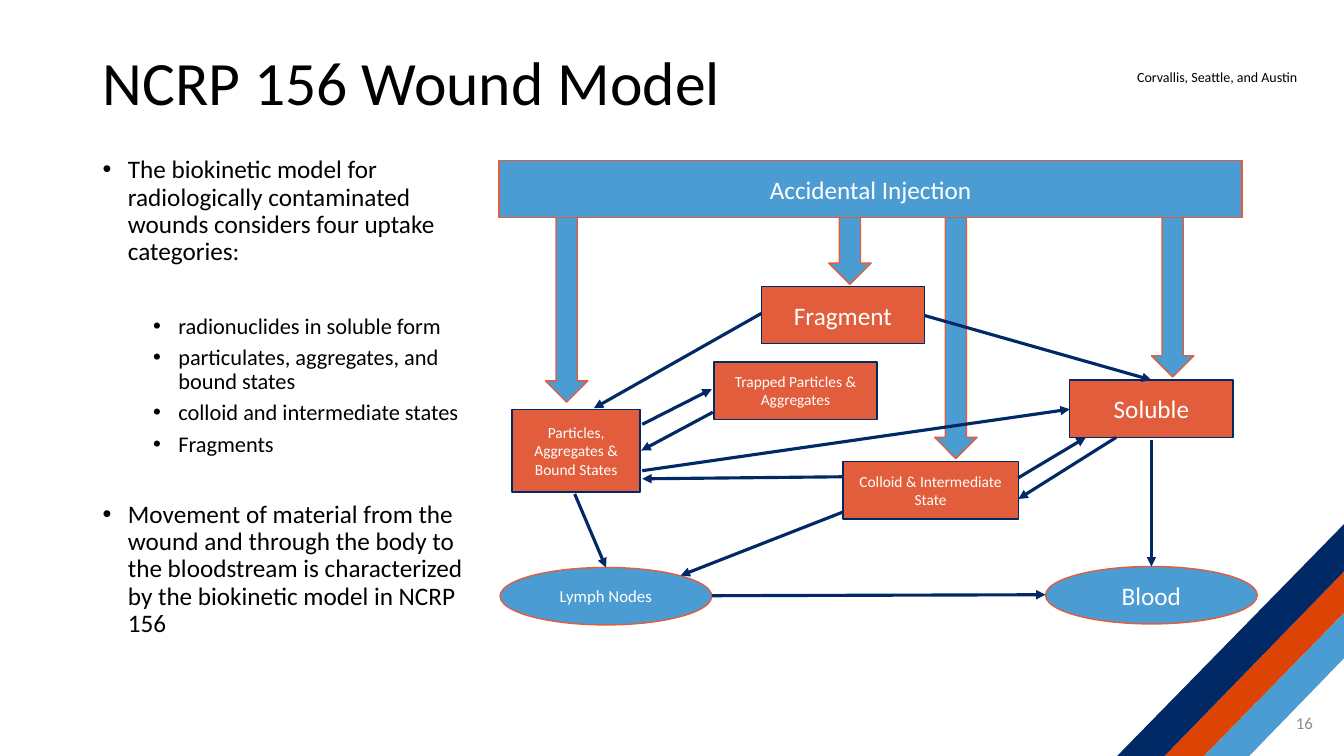
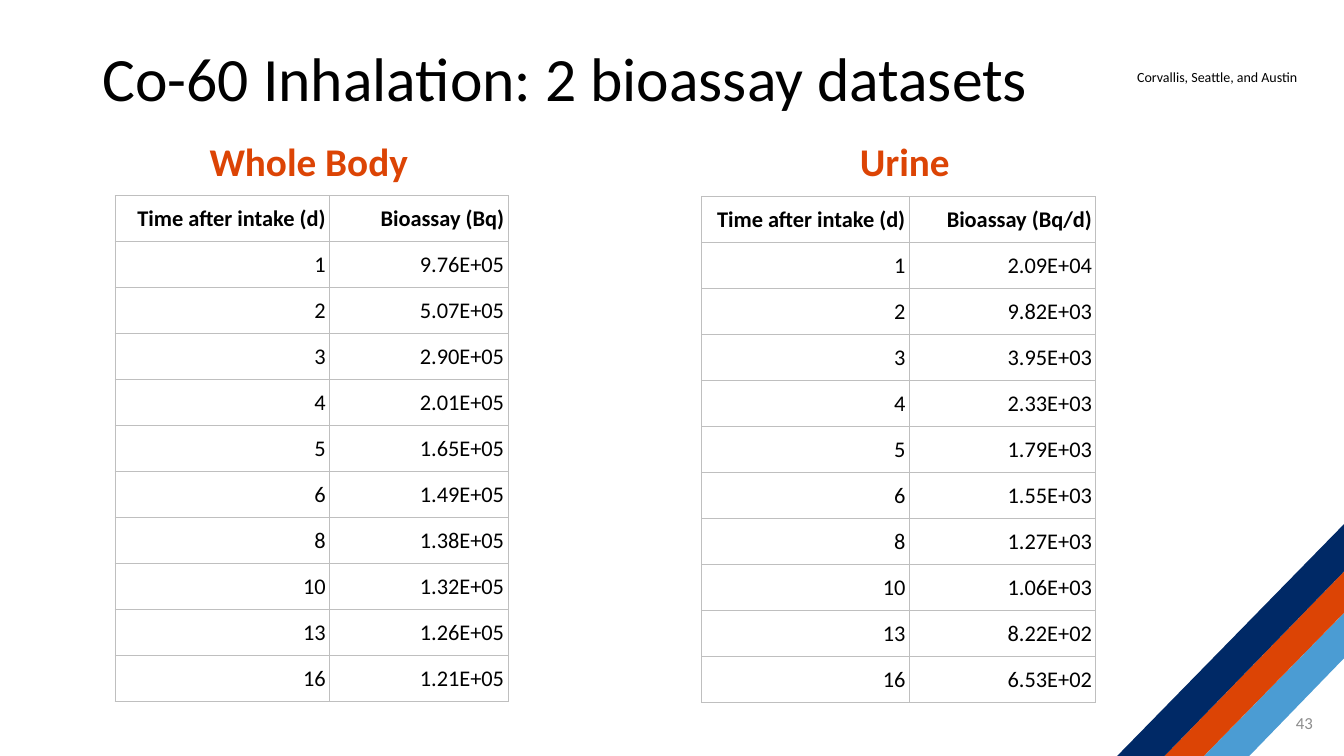
"""Build two slides: the wound model diagram and the inhalation bioassay tables."""
from dataclasses import dataclass, field
from typing import Any

from lxml.etree import SubElement
from pptx import Presentation
from pptx.dml.color import RGBColor
from pptx.enum.shapes import MSO_CONNECTOR, MSO_SHAPE
from pptx.enum.text import MSO_ANCHOR, PP_ALIGN
from pptx.oxml import parse_xml
from pptx.oxml.ns import nsdecls, qn
from pptx.util import Emu, Pt

EMU_PER_PX = 9144
WIDTH, HEIGHT = 1333, 750
FONT = "Calibri"
NAVY, ORANGE, SKY, CORAL = "002966", "DC4405", "4B9CD3", "E25D3C"
BLACK, WHITE, GREY, RULE = "000000", "FFFFFF", "8C8C8C", "BFBFBF"


@dataclass(frozen=True)
class Box:
    left: int
    top: int
    width: int
    height: int


@dataclass(frozen=True)
class Style:
    size: int
    color: str = BLACK
    bold: bool = False
    para: dict[str, Any] = field(default_factory=dict)


@dataclass(frozen=True)
class Bullet:
    text: str
    size: int
    before: int
    level: int = 0


@dataclass(frozen=True)
class Stripe:
    color: str
    bottom: tuple[int, int]
    right: tuple[int, int]


@dataclass(frozen=True)
class Node:
    text: str
    box: Box
    size: int
    kind: MSO_SHAPE = MSO_SHAPE.RECTANGLE
    fill: str = CORAL
    line: str = NAVY


@dataclass(frozen=True)
class Flow:
    start: tuple[int, int]
    end: tuple[int, int]


@dataclass(frozen=True)
class Dataset:
    heading: str
    heading_left: int
    unit: str
    box: Box
    columns: tuple[int, int]
    values: tuple[str, ...]


TITLE = Style(44, para={"line_spacing": 0.9})
LOCATION = Style(10)
NUMBER = Style(12, GREY, para={"alignment": PP_ALIGN.RIGHT})
HEADING = Style(28, ORANGE, True, {"line_spacing": 0.9})

STRIPES = (
    Stripe(SKY, (1194, 1239), (608, 653)),
    Stripe(ORANGE, (1155, 1194), (567, 608)),
    Stripe(NAVY, (1108, 1155), (520, 567)),
)

BULLETS = (
    Bullet("The biokinetic model for radiologically contaminated wounds considers four uptake categories:", 18, 0),
    Bullet("radionuclides in soluble form", 16, 35, 1),
    Bullet("particulates, aggregates, and bound states", 16, 5, 1),
    Bullet("colloid and intermediate states", 16, 5, 1),
    Bullet("Fragments", 16, 5, 1),
    Bullet("Movement of material from the wound and through the body to the bloodstream is "
           "characterized by the biokinetic model in NCRP 156", 18, 32),
)

INJECTION_ARROWS = (
    Box(541, 196, 42, 203),
    Box(822, 210, 42, 72),
    Box(927, 208, 42, 247),
    Box(1142, 171, 42, 203),
)

NODES = (
    Node("Accidental Injection", Box(495, 159, 737, 57), 18, fill=SKY, line=CORAL),
    Node("Soluble", Box(1061, 377, 162, 57), 18),
    Node("Fragment", Box(755, 284, 162, 57), 18),
    Node("Trapped Particles & Aggregates", Box(708, 359, 162, 57), 11),
    Node("Colloid & Intermediate State", Box(836, 458, 174, 57), 11),
    Node("Particles, Aggregates & Bound States", Box(508, 406, 127, 82), 11),
    Node("Blood", Box(1037, 562, 210, 57), 18, MSO_SHAPE.OVAL, SKY, CORAL),
    Node("Lymph Nodes", Box(496, 563, 210, 57), 12, MSO_SHAPE.OVAL, SKY, CORAL),
)

FLOWS = (
    Flow((917, 313), (1142, 377)),
    Flow((1142, 437), (1142, 562)),
    Flow((706, 591), (1037, 590)),
    Flow((637, 467), (1061, 406)),
    Flow((836, 508), (675, 571)),
    Flow((570, 490), (601, 563)),
    Flow((755, 311), (589, 405)),
    Flow((637, 421), (706, 386)),
    Flow((707, 409), (636, 447)),
    Flow((836, 473), (637, 475)),
    Flow((1010, 474), (1077, 434)),
    Flow((1107, 434), (1010, 495)),
)

DAYS = ("1", "2", "3", "4", "5", "6", "8", "10", "13", "16")
DATASETS = (
    Dataset("Whole Body", 208, "Bq", Box(114, 194, 390, 502), (213, 177),
            ("9.76E+05", "5.07E+05", "2.90E+05", "2.01E+05", "1.65E+05",
             "1.49E+05", "1.38E+05", "1.32E+05", "1.26E+05", "1.21E+05")),
    Dataset("Urine", 853, "Bq/d", Box(696, 195, 391, 502), (206, 185),
            ("2.09E+04", "9.82E+03", "3.95E+03", "2.33E+03", "1.79E+03",
             "1.55E+03", "1.27E+03", "1.06E+03", "8.22E+02", "6.53E+02")),
)


def px(length: int) -> Emu:
    """Turn pixels into EMU."""
    return Emu(length * EMU_PER_PX)


def place(box: Box) -> tuple[Emu, Emu, Emu, Emu]:
    """Turn a box into EMU lengths."""
    return px(box.left), px(box.top), px(box.width), px(box.height)


def rgb(code: str) -> RGBColor:
    """Turn a hex string into a colour."""
    return RGBColor.from_string(code)


def apply(target: Any, values: dict[str, Any]) -> None:
    """Set each named attribute on the target."""
    for name, value in values.items():
        setattr(target, name, value)


def write(para: Any, text: str, style: Style) -> None:
    """Add one styled span to a paragraph."""
    apply(para, style.para)
    span = para.add_run()
    span.text = text
    apply(span.font, {"name": FONT, "size": Pt(style.size), "bold": style.bold})
    span.font.color.rgb = rgb(style.color)


def add_text(page: Any, box: Box, text: str, style: Style, wrap: bool = True) -> None:
    """Add a text box holding one paragraph."""
    frame = page.shapes.add_textbox(*place(box)).text_frame
    apply(frame, {"word_wrap": wrap, "vertical_anchor": MSO_ANCHOR.MIDDLE})
    write(frame.paragraphs[0], text, style)


def paint(shape: Any, fill: str, line: str | None = None) -> None:
    """Give a shape a flat fill and an optional thin outline."""
    shape.shadow.inherit = False
    shape.fill.solid()
    shape.fill.fore_color.rgb = rgb(fill)
    if line is None:
        shape.line.fill.background()
    else:
        shape.line.color.rgb = rgb(line)
        shape.line.width = Pt(1)


def add_stripe(page: Any, stripe: Stripe) -> None:
    """Draw one diagonal band across the bottom right corner."""
    (near, far), (upper, lower) = stripe.bottom, stripe.right
    builder = page.shapes.build_freeform(near, HEIGHT, scale=EMU_PER_PX)
    builder.add_line_segments([(WIDTH, upper), (WIDTH, lower), (far, HEIGHT)])
    paint(builder.convert_to_shape(), stripe.color)


def add_page(deck: Any, title: str, title_top: int, number: int) -> Any:
    """Add a blank page with the shared title, place line, stripes and number."""
    page = deck.slides.add_slide(deck.slide_layouts[6])
    add_text(page, Box(1118, 63, 182, 27), "Corvallis, Seattle, and Austin", LOCATION, wrap=False)
    for stripe in STRIPES:
        add_stripe(page, stripe)
    add_text(page, Box(92, title_top, 1150, 110), title, TITLE)
    add_text(page, Box(1012, 697, 300, 40), str(number), NUMBER)
    return page


def add_bullets(page: Any, box: Box, bullets: tuple[Bullet, ...]) -> None:
    """Add a two-level bulleted list."""
    frame = page.shapes.add_textbox(*place(box)).text_frame
    frame.word_wrap = True
    for index, bullet in enumerate(bullets):
        para = frame.add_paragraph() if index else frame.paragraphs[0]
        properties = para._p.get_or_add_pPr()
        properties.set("marL", str(px(25 + 50 * bullet.level)))
        properties.set("indent", str(px(-25)))
        SubElement(properties, qn("a:buFont"), typeface="Arial")
        SubElement(properties, qn("a:buChar"), char="•")
        spacing = {"level": bullet.level, "line_spacing": 0.9, "space_before": Pt(bullet.before)}
        write(para, bullet.text, Style(bullet.size, para=spacing))


def add_node(page: Any, node: Node) -> None:
    """Draw one labelled compartment."""
    shape = page.shapes.add_shape(node.kind, *place(node.box))
    paint(shape, node.fill, node.line)
    apply(shape.text_frame, {"word_wrap": True, "vertical_anchor": MSO_ANCHOR.MIDDLE})
    write(shape.text_frame.paragraphs[0], node.text,
          Style(node.size, WHITE, para={"alignment": PP_ALIGN.CENTER}))


def add_flow(page: Any, flow: Flow) -> None:
    """Draw one arrow between compartments."""
    ends = (px(length) for length in (*flow.start, *flow.end))
    arrow = page.shapes.add_connector(MSO_CONNECTOR.STRAIGHT, *ends)
    arrow.line.color.rgb = rgb(NAVY)
    arrow.line.width = Pt(2.25)
    SubElement(arrow.line._get_or_add_ln(), qn("a:tailEnd"), type="triangle")
    SubElement(arrow._element.spPr, qn("a:effectLst"))


def add_borders(cell: Any) -> None:
    """Rule all four sides of a table cell."""
    properties = cell._tc.get_or_add_tcPr()
    for index, side in enumerate("LRTB"):
        properties.insert(index, parse_xml(
            f'<a:ln{side} {nsdecls("a")} w="{Pt(0.75)}"><a:solidFill>'
            f'<a:srgbClr val="{RULE}"/></a:solidFill></a:ln{side}>'))


def add_dataset(page: Any, data: Dataset) -> None:
    """Add a heading and its bioassay table."""
    rows = [("Time after intake (d)", f"Bioassay ({data.unit})"), *zip(DAYS, data.values)]
    table = page.shapes.add_table(len(rows), 2, *place(data.box)).table
    apply(table, {"first_row": False, "horz_banding": False})
    for column, width in zip(table.columns, data.columns):
        column.width = px(width)
    layout = {"margin_left": px(4), "margin_right": px(4), "margin_top": 0,
              "margin_bottom": 0, "vertical_anchor": MSO_ANCHOR.MIDDLE}
    for row_index, row in enumerate(rows):
        style = Style(16, bold=row_index == 0, para={"alignment": PP_ALIGN.RIGHT})
        for column_index, text in enumerate(row):
            cell = table.cell(row_index, column_index)
            apply(cell, layout)
            cell.fill.background()
            add_borders(cell)
            write(cell.text_frame.paragraphs[0], text, style)
    add_text(page, Box(data.heading_left - 10, 138, 260, 50), data.heading, HEADING)


def main() -> None:
    """Build and save the deck."""
    deck = Presentation()
    apply(deck, {"slide_width": px(WIDTH), "slide_height": px(HEIGHT)})

    model = add_page(deck, "NCRP 156 Wound Model", 30, 16)
    add_bullets(model, Box(92, 151, 398, 568), BULLETS)
    for box in INJECTION_ARROWS:
        paint(model.shapes.add_shape(MSO_SHAPE.DOWN_ARROW, *place(box)), SKY, CORAL)
    for node in NODES:
        add_node(model, node)
    for flow in FLOWS:
        add_flow(model, flow)

    bioassay = add_page(deck, "Co-60 Inhalation: 2 bioassay datasets", 26, 43)
    for data in DATASETS:
        add_dataset(bioassay, data)

    deck.save("out.pptx")


if __name__ == "__main__":
    main()
